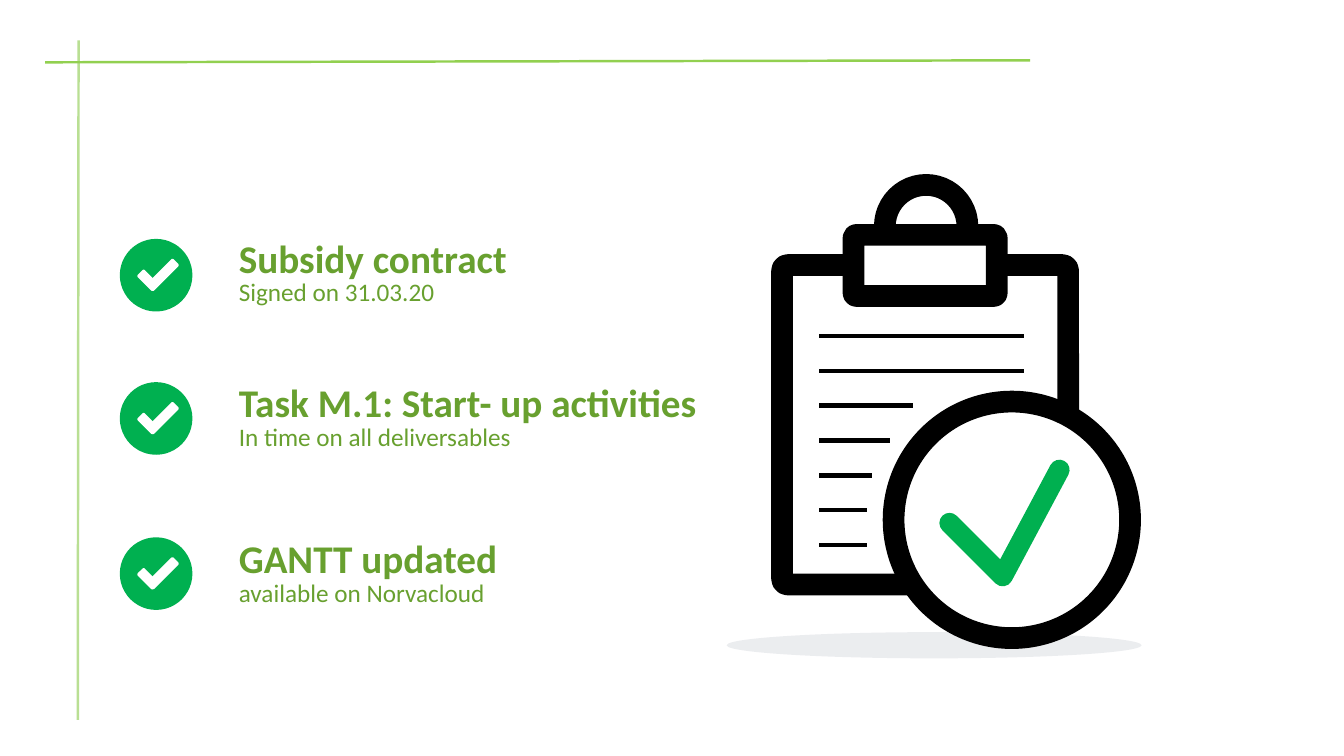
from lxml.etree import SubElement
from pptx import Presentation
from pptx.dml.color import RGBColor
from pptx.enum.shapes import MSO_CONNECTOR as Connector, MSO_SHAPE as Preset
from pptx.enum.text import PP_ALIGN as Align
from pptx.oxml.ns import qn
from pptx.util import Cm, Pt

THEME = {
    "font": "Calibri",
    "title": 28,
    "note": 18,
    "text": "68A02F",
    "check": "00B050",
    "ink": "000000",
    "paper": "FFFFFF",
    "shadow": "44546A",
    "pale_rule": "B9DF93",
    "bright_rule": "92D050",
}
OUTLINE = 15.5

presentation = Presentation()
presentation.slide_width = Cm(33.87)
presentation.slide_height = Cm(19.05)
slide = presentation.slides.add_slide(presentation.slide_layouts[6])


def add_text(text, left, top, width, height, size, bold=False, align=Align.LEFT):
    box = slide.shapes.add_textbox(Cm(left), Cm(top), Cm(width), Cm(height))
    box.text_frame.word_wrap = True
    paragraph = box.text_frame.paragraphs[0]
    paragraph.alignment = align
    run = paragraph.add_run()
    run.text = text
    run.font.name = THEME["font"]
    run.font.size = Pt(size)
    run.font.bold = bold
    run.font.color.rgb = RGBColor.from_string(THEME["text"])


def add_preset(preset, left, top, width, height, fill, outline=0):
    shape = slide.shapes.add_shape(preset, Cm(left), Cm(top), Cm(width), Cm(height))
    shape.shadow.inherit = False
    shape.fill.solid()
    shape.fill.fore_color.rgb = RGBColor.from_string(THEME[fill])
    if outline:
        shape.line.color.rgb = RGBColor.from_string(THEME["ink"])
        shape.line.width = Pt(outline)
    else:
        shape.line.fill.background()
    return shape


ground = add_preset(Preset.OVAL, 18.31, 15.93, 10.46, 0.66, "shadow")
ground_color = ground._element.spPr.find(qn("a:solidFill"))[0]
SubElement(ground_color, qn("a:alpha")).set("val", "10000")

board = add_preset(Preset.ROUNDED_RECTANGLE, 19.71, 6.68, 7.21, 8.05, "paper", OUTLINE)
board.adjustments[0] = 0.02
add_preset(Preset.OVAL, 22.3, 4.66, 2.08, 2.08, "paper", OUTLINE)
clip = add_preset(Preset.ROUNDED_RECTANGLE, 21.51, 5.92, 3.61, 1.54, "paper", OUTLINE)
clip.adjustments[0] = 0.05

lines = [
    (1.98, 1.02, 1.96, 18.14, "pale_rule", 1.75),
    (1.14, 1.57, 25.96, 1.52, "bright_rule", 1.75),
]
for index, end in enumerate([25.81, 25.81, 23.01, 22.43, 21.97, 21.84, 21.84]):
    level = 8.46 + index * 0.88
    lines.append((20.65, level, end, level, "ink", 3))
for start_x, start_y, end_x, end_y, color, width in lines:
    connector = slide.shapes.add_connector(
        Connector.STRAIGHT, Cm(start_x), Cm(start_y), Cm(end_x), Cm(end_y)
    )
    connector.line.color.rgb = RGBColor.from_string(THEME[color])
    connector.line.width = Pt(width)
    SubElement(connector._element.spPr, qn("a:effectLst"))

add_preset(Preset.OVAL, 22.52, 10.12, 5.96, 5.96, "paper", OUTLINE)
builder = slide.shapes.build_freeform(Cm(23.93), Cm(13.18))
builder.add_line_segments([(Cm(25.27), Cm(14.52)), (Cm(26.7), Cm(11.84))], close=False)
tick = builder.convert_to_shape()
tick.shadow.inherit = False
tick.fill.background()
tick.line.color.rgb = RGBColor.from_string(THEME["check"])
tick.line.width = Pt(14.5)
tick_line = tick._element.spPr.find(qn("a:ln"))
tick_line.set("cap", "rnd")
SubElement(tick_line, qn("a:round"))

milestones = [
    (6.02, 5.77, 8.61, "Subsidy contract", "Signed on 31.03.20"),
    (9.63, 9.42, 13.31, "Task M.1: Start- up activities", "In time on all deliversables"),
    (13.54, 13.34, 7.72, "GANTT updated", "available on Norvacloud"),
]
for circle_top, title_top, title_width, title, note in milestones:
    add_preset(Preset.OVAL, 3.02, circle_top, 1.83, 1.83, "check")
    short_arm = add_preset(Preset.ROUNDED_RECTANGLE, 3.45, circle_top + 0.92, 0.56, 0.25, "paper")
    short_arm.rotation = 45
    long_arm = add_preset(Preset.ROUNDED_RECTANGLE, 3.63, circle_top + 0.78, 0.94, 0.25, "paper")
    long_arm.rotation = 135
    add_text(note, 5.77, title_top + 1.08, 8.61, 1.02, THEME["note"], align=Align.JUSTIFY)
    add_text(title, 5.77, title_top, title_width, 1.45, THEME["title"], bold=True)

presentation.save("out.pptx")
